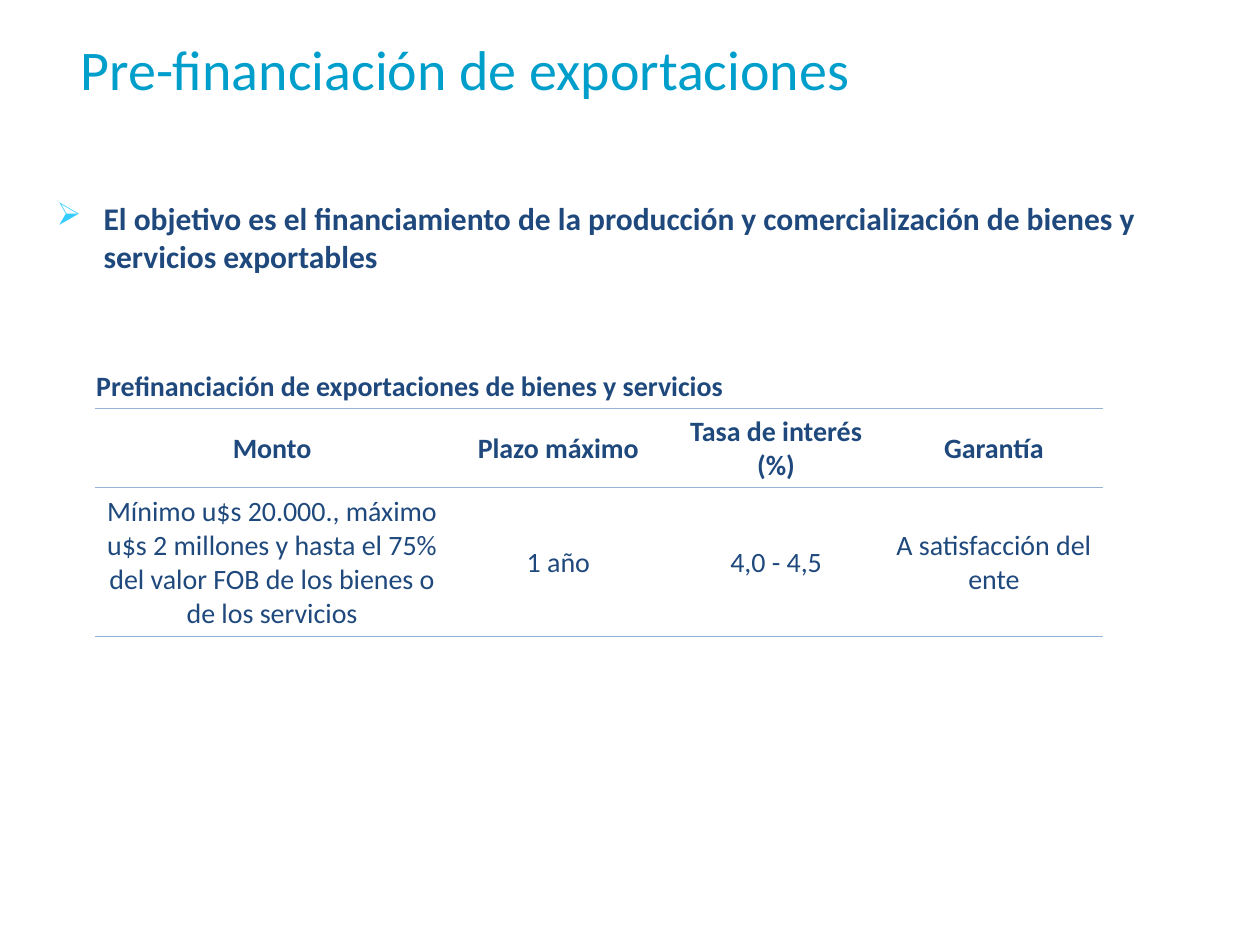
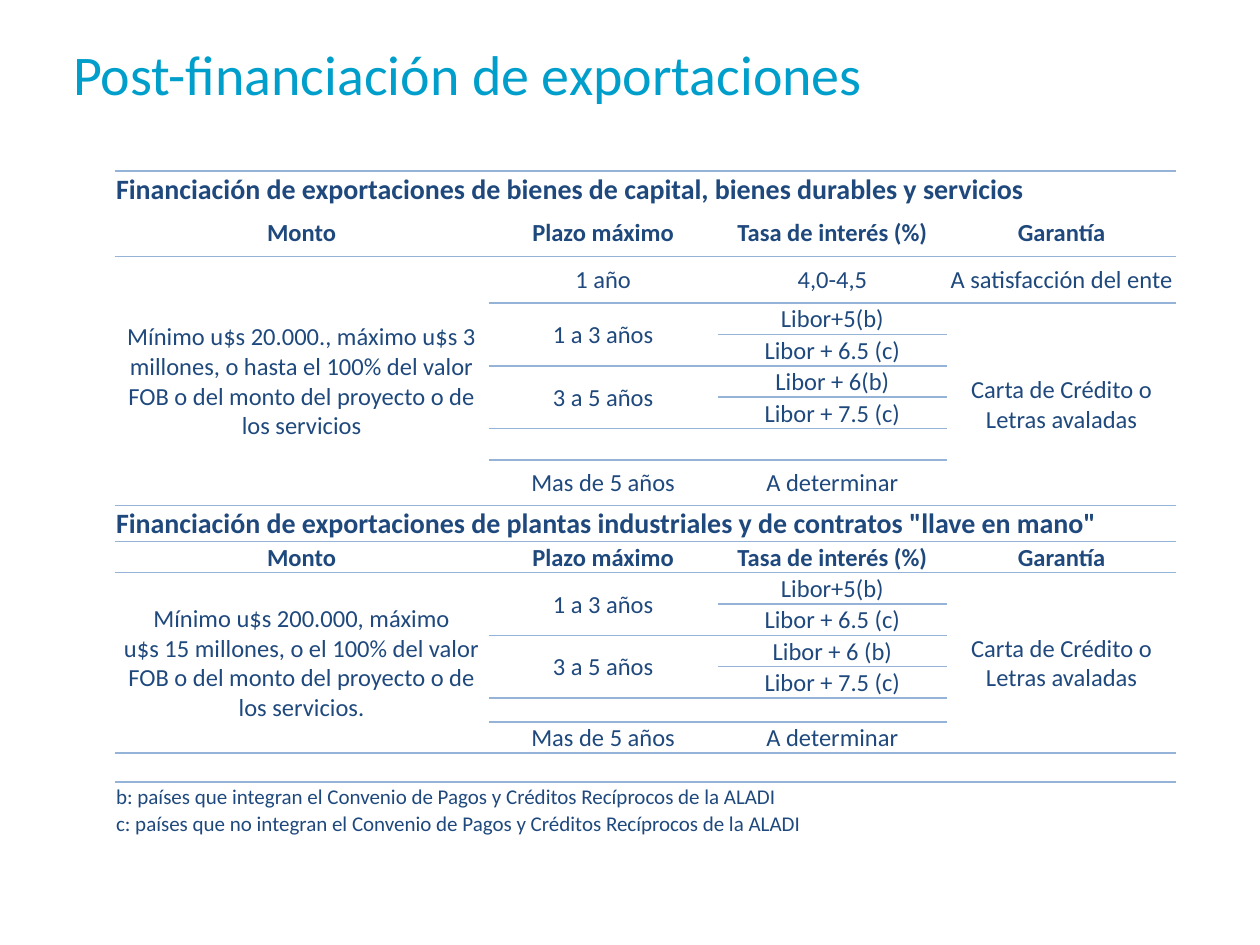
from dataclasses import dataclass

from lxml import etree
from pptx import Presentation
from pptx.dml.color import RGBColor
from pptx.enum.text import MSO_ANCHOR, PP_ALIGN
from pptx.oxml.ns import qn
from pptx.util import Cm, Pt

LEFT, CENTER = PP_ALIGN.LEFT, PP_ALIGN.CENTER
MIDDLE, BOTTOM = MSO_ANCHOR.MIDDLE, MSO_ANCHOR.BOTTOM
PLAIN = "{2D5ABB26-0587-4C30-8999-92F81FD0307C}"
SIDE, ABOVE = "<", "^"


@dataclass(frozen=True)
class Theme:
    font: str = "Calibri"
    title: str = "009FCB"
    ink: str = "1F497D"
    mark: str = "33CCFF"
    rule: str = "95B3D7"
    paper: str = "FFFFFF"
    big: int = 32
    lead: int = 18
    head: int = 16
    body: int = 14
    note: int = 12
    tiny: int = 10


@dataclass(frozen=True)
class Kind:
    size: int
    bold: bool = False
    align: int = CENTER
    anchor: int = MIDDLE
    line: bool = True


THEME = Theme()
NAME = Kind(THEME.head, True, LEFT)
OPEN = Kind(THEME.head, True, LEFT, line=False)
WIDE = Kind(THEME.head, True)
LARGE = Kind(THEME.head)
COLS = Kind(THEME.body, True)
BODY = Kind(THEME.body)
THIN = Kind(THEME.tiny)
GAP = Kind(THEME.note, line=False)
NOTE = Kind(THEME.note, False, LEFT, BOTTOM, False)

HEADS = ["Monto", "Plazo máximo", "Tasa de interés (%)", "Garantía"]
BACKING = "Carta de Crédito o Letras avaladas"


class Deck:
    def __init__(self, theme):
        self.theme = theme
        self.file = Presentation()
        self.file.slide_width, self.file.slide_height = Cm(25.4), Cm(19.05)
        self.slide = None

    def run(self, para, text, size, color, bold=False):
        run = para.add_run()
        run.text = text
        font = run.font
        font.name, font.size, font.bold = self.theme.font, Pt(size), bold
        font.color.rgb = RGBColor.from_string(color)

    def page(self, title, left, top):
        self.slide = self.file.slides.add_slide(self.file.slide_layouts[5])
        box = self.slide.shapes.title
        box.left, box.top, box.width, box.height = Cm(left), Cm(top), Cm(23.24), Cm(2.08)
        frame = box.text_frame
        frame.vertical_anchor = MIDDLE
        frame.margin_bottom = Cm(0.4)
        para = frame.paragraphs[0]
        para.alignment = LEFT
        self.run(para, title, self.theme.big, self.theme.title)

    def bullet(self, text, left, top, width, height):
        box = self.slide.shapes.add_textbox(Cm(left), Cm(top), Cm(width), Cm(height))
        box.text_frame.word_wrap = True
        para = box.text_frame.paragraphs[0]
        props = para._p.get_or_add_pPr()
        props.set("marL", str(Cm(0.95)))
        props.set("indent", str(-Cm(0.95)))
        tint = etree.SubElement(props, qn("a:buClr"))
        etree.SubElement(tint, qn("a:srgbClr"), val=self.theme.mark)
        etree.SubElement(props, qn("a:buChar"), char="➢")
        self.run(para, text, self.theme.lead, self.theme.ink, True)

    def edge(self, cell, tag):
        line = etree.Element(qn(tag), w=str(Pt(1)))
        fill = etree.SubElement(line, qn("a:solidFill"))
        etree.SubElement(fill, qn("a:srgbClr"), val=self.theme.rule)
        cell._tc.get_or_add_tcPr().insert(0, line)

    def cell(self, cell, text, kind):
        cell.fill.solid()
        cell.fill.fore_color.rgb = RGBColor.from_string(self.theme.paper)
        cell.margin_left = cell.margin_right = cell.margin_top = Cm(0.03)
        cell.margin_bottom = 0
        cell.vertical_anchor = kind.anchor
        para = cell.text_frame.paragraphs[0]
        para.alignment = kind.align
        if text in ("", SIDE, ABOVE):
            etree.SubElement(para._p, qn("a:endParaRPr"), sz=str(kind.size * 100))
            return
        for i, part in enumerate(text.split("\n")):
            if i:
                para.add_line_break()
            self.run(para, part, kind.size, self.theme.ink, kind.bold)

    def table(self, left, top, widths, rows, roof=False):
        marks = [row[2] for row in rows]
        kinds = [row[1] for row in rows]
        high = sum(row[0] for row in rows)
        frame = self.slide.shapes.add_table(
            len(rows), len(widths), Cm(left), Cm(top), Cm(sum(widths)), Cm(high))
        grid = frame.table
        grid.first_row = grid.horz_banding = False
        grid._tbl.tblPr.find(qn("a:tableStyleId")).text = PLAIN
        for col, width in zip(grid.columns, widths):
            col.width = Cm(width)
        for r, (height, kind, texts) in enumerate(rows):
            grid.rows[r].height = Cm(height)
            for c, text in enumerate(texts):
                cell = grid.cell(r, c)
                self.cell(cell, text, kind)
                last = r + 1 == len(rows) or marks[r + 1][c] != ABOVE
                if kind.line and (last or text != ABOVE):
                    self.edge(cell, "a:lnB")
                if text != ABOVE and (kinds[r - 1].line if r else roof):
                    self.edge(cell, "a:lnT")
        for r, texts in enumerate(marks):
            for c, text in enumerate(texts):
                if text in (SIDE, ABOVE):
                    continue
                right, down = c, r
                while right + 1 < len(widths) and texts[right + 1] == SIDE:
                    right += 1
                while down + 1 < len(rows) and marks[down + 1][c] == ABOVE:
                    down += 1
                if (right, down) != (c, r):
                    grid.cell(r, c).merge(grid.cell(down, right))


def span(text, free=0):
    return [text] + [SIDE] * (3 - free) + [""] * free


def terms(amount, backing, rate):
    return [
        (0.63, BODY, [amount, "1 a 3 años", "Libor+5(b)", backing]),
        (0.63, BODY, [ABOVE, ABOVE, "Libor + 6.5 (c)", ABOVE]),
        (0.63, BODY, [ABOVE, "3 a 5 años", rate, ABOVE]),
        (0.63, BODY, [ABOVE, ABOVE, "Libor + 7.5 (c)", ABOVE]),
    ]


def final(empty, kind, height):
    return [
        (empty, kind, [ABOVE, "", "", ABOVE]),
        (height, BODY, [ABOVE, "Mas de 5 años", "A determinar", ABOVE]),
    ]


def main():
    deck = Deck(THEME)

    deck.page("Pre-financiación de exportaciones", 1.37, 0.46)
    deck.bullet("El objetivo es el financiamiento de la producción y "
                "comercialización de bienes y servicios exportables",
                0.89, 3.89, 23.6, 1.8)
    deck.table(1.91, 7.34, [7.15] + [4.39] * 3, [
        (0.89, NAME, span("Prefinanciación de exportaciones de bienes y servicios", 1)),
        (1.6, WIDE, HEADS),
        (3, LARGE, ["Mínimo u$s 20.000., máximo u$s 2 millones y hasta el 75% "
                    "del valor FOB de los bienes o de los servicios",
                    "1 año", "4,0 - 4,5", "A satisfacción del ente"]),
    ])

    deck.page("Post-financiación de exportaciones", 1.22, 0.58)
    goods = ("Mínimo u$s 20.000., máximo u$s 3 millones, o hasta el 100% del valor "
             "FOB o del monto del proyecto o de los servicios")
    plants = ("Mínimo u$s 200.000, máximo\nu$s 15 millones, o el 100% del valor "
              "FOB o del monto del proyecto o de los servicios.")
    deck.table(2.31, 3.45, [7.54] + [4.62] * 3, [
        (0.74, OPEN, span("Financiación de exportaciones de bienes de capital, "
                          "bienes durables y servicios")),
        (0.98, COLS, HEADS),
        (0.94, BODY, [goods, "1 año", "4,0-4,5", "A satisfacción del ente"]),
        *terms(ABOVE, BACKING, "Libor + 6(b)"),
        *final(0.63, BODY, 0.92),
        (0.7, OPEN, span("Financiación de exportaciones de plantas industriales "
                         "y de contratos \"llave en mano\"")),
        (0.63, COLS, HEADS),
        *terms(plants, BACKING, "Libor + 6 (b)"),
        *final(0.48, THIN, 0.63),
        (0.58, GAP, [""] * 4),
        (0.56, NOTE, span("b: países que integran el Convenio de Pagos y Créditos "
                          "Recíprocos de la ALADI", 1)),
        (0.56, NOTE, span("c: países que no integran el Convenio de Pagos y Créditos "
                          "Recíprocos de la ALADI")),
    ], roof=True)

    deck.file.save("out.pptx")


if __name__ == "__main__":
    main()
